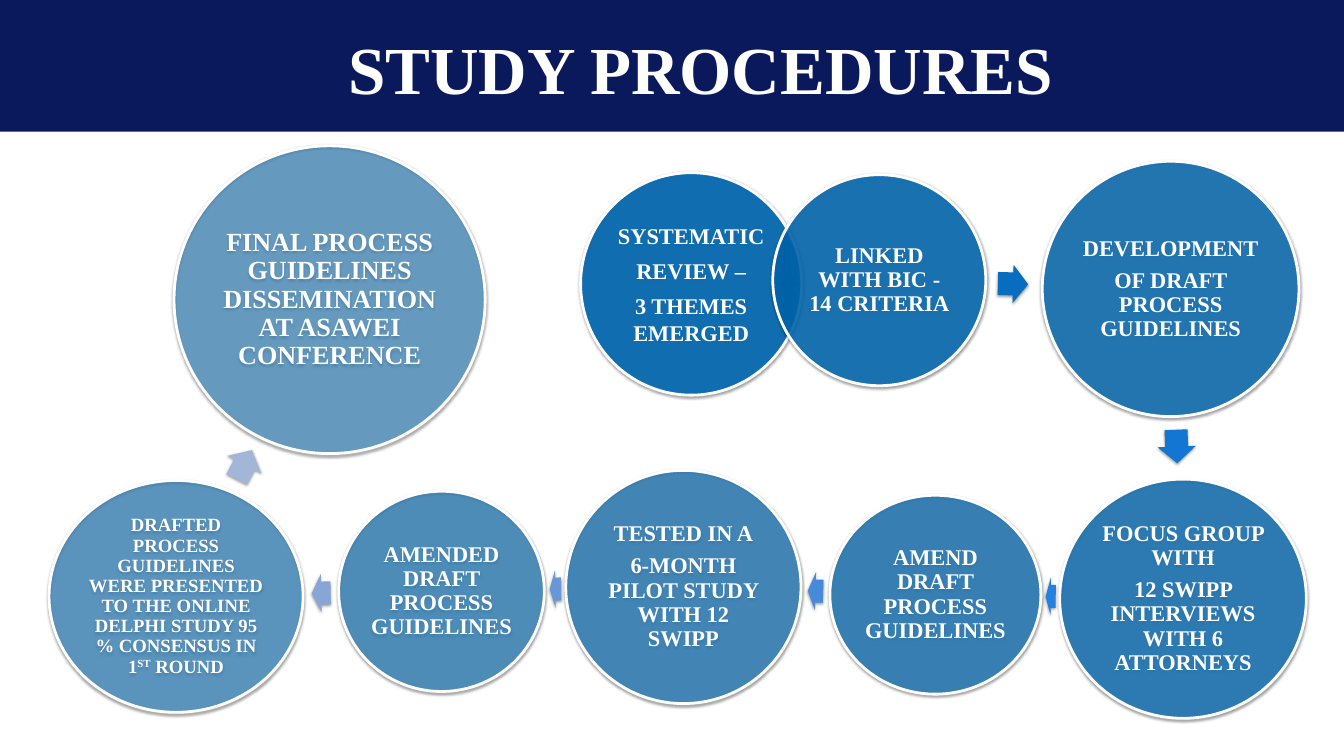
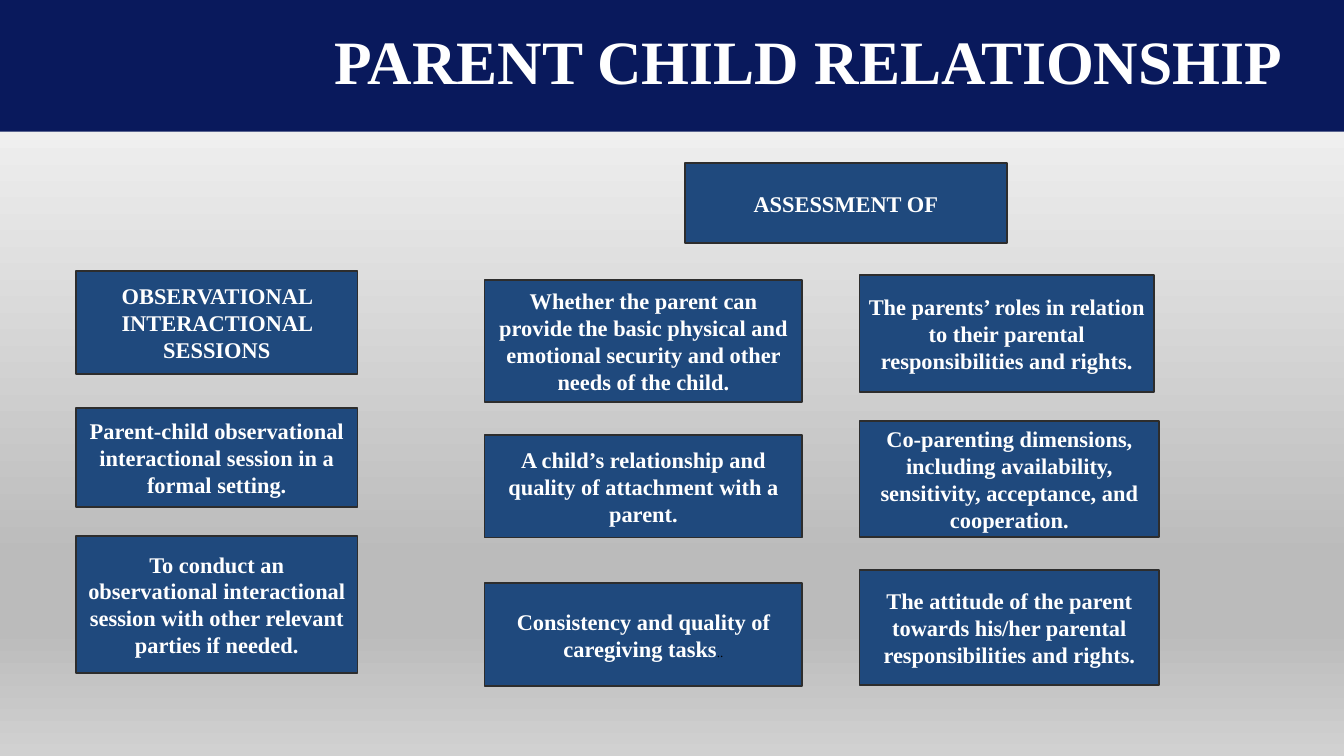
from copy import deepcopy
from itertools import zip_longest

from pptx import Presentation, oxml
from pptx.dml.color import RGBColor
from pptx.enum import shapes, text
from pptx.oxml import ns
from pptx.util import Inches, Pt

FONT = "Times New Roman"
NAVY = RGBColor(0x09, 0x19, 0x5C)
BLUE = RGBColor(0x00, 0x67, 0xB1)
STEEL = RGBColor(0x1F, 0x49, 0x7D)
EDGE = RGBColor(0x2D, 0x2D, 0x2D)
WHITE = RGBColor(0xFF, 0xFF, 0xFF)
BLACK = RGBColor(0x00, 0x00, 0x00)
GREYS = [(0, "FFFFFF"), (0.74, "BBBBBB"), (0.83, "BBBBBB"), (1, "D1D1D1")]
KIND = shapes.MSO_SHAPE

STEPS = [
    ((8.64, 2.57, 3.29, 3.31), 24, ["SYSTEMATIC", "REVIEW –", "3 THEMES EMERGED"]),
    ((11.5, 2.6, 3.17, 3.14), 24, ["LINKED WITH BIC - 14 CRITERIA"]),
    ((15.51, 2.4, 3.82, 3.8), 24, ["DEVELOPMENT", "OF DRAFT PROCESS GUIDELINES"]),
    ((15.77, 7.13, 3.67, 3.56), 24,
     ["FOCUS GROUP WITH", "12 SWIPP INTERVIEWS WITH 6 ATTORNEYS"]),
    ((12.35, 7.37, 3.14, 2.96), 24, ["AMEND DRAFT PROCESS GUIDELINES"]),
    ((8.42, 7, 3.5, 3.47), 24, ["TESTED IN A", "6-MONTH PILOT STUDY WITH 12 SWIPP"]),
    ((5.04, 7.31, 3.06, 2.98), 24, ["AMENDED DRAFT PROCESS GUIDELINES"]),
    ((0.73, 7.15, 3.78, 3.45), 20,
     [["DRAFTED PROCESS GUIDELINES WERE PRESENTED TO THE ONLINE DELPHI STUDY "
       "95 % CONSENSUS IN 1", ("ST", {"base": 30}), " ROUND"]]),
    ((2.59, 2.17, 4.63, 4.58), 28,
     ["FINAL PROCESS GUIDELINES DISSEMINATION AT ASAWEI CONFERENCE"]),
]

LINKS = [
    ((11.58, 3.4, 0.28, 1.59), 178.9, "0062A9"),
    ((14.85, 3.94, 0.45, 0.57), 1.6, "086DBF"),
    ((17.26, 6.36, 0.5, 0.57), 87.7, "1376D2"),
    ((15.56, 8.59, 0.15, 0.57), 180.7, "247FDF"),
    ((12.02, 8.51, 0.23, 0.57), 181.8, "478ADA"),
    ((8.18, 8.48, 0.17, 0.57), 179.1, "6897D7"),
    ((4.64, 8.54, 0.28, 0.57), 178.9, "86A6D6"),
    ((3.39, 6.63, 0.49, 0.57), 297.4, "A2B6D8"),
]

BOXES = [
    ((1.13, 4.03, 4.19, 1.53), "OBSERVATIONAL INTERACTIONAL SESSIONS"),
    ((1.13, 6.07, 4.19, 1.48),
     "Parent-child observational interactional session in a formal setting."),
    ((1.13, 7.98, 4.19, 2.03),
     "To conduct an observational interactional session with other relevant "
     "parties if needed."),
    ((10.19, 2.43, 4.79, 1.19), "ASSESSMENT OF"),
    ((7.21, 4.17, 4.73, 1.81),
     "Whether the parent can provide the basic physical and emotional security "
     "and other needs of the child."),
    ((7.21, 6.47, 4.73, 1.53),
     "A child’s relationship and quality of attachment with a parent."),
    ((7.21, 8.68, 4.73, 1.53),
     ["Consistency and quality of caregiving tasks",
      ("..", {"size": 14, "color": BLACK, "bold": False})]),
    ((12.79, 4.09, 4.38, 1.74),
     "The parents’ roles in relation to their parental responsibilities and rights."),
    ((12.79, 6.27, 4.46, 1.72),
     "Co-parenting dimensions, including availability, sensitivity, acceptance, "
     "and cooperation."),
    ((12.79, 8.48, 4.46, 1.72),
     "The attitude of the parent towards his/her parental responsibilities and rights."),
]


def style(run, size, color=WHITE, bold=True, base=0):
    font = run.font
    font.name, font.size, font.bold = FONT, Pt(size), bold
    font.color.rgb = color
    if base:
        font._element.set("baseline", str(base * 1000))


def write(shape, paras, size=24, align=text.PP_ALIGN.CENTER, inset=(0.1, 0.05),
          after=0, lead=None):
    frame = shape.text_frame
    frame.word_wrap = True
    frame.auto_size = text.MSO_AUTO_SIZE.NONE
    frame.vertical_anchor = text.MSO_ANCHOR.MIDDLE
    frame.margin_left = frame.margin_right = Inches(inset[0])
    frame.margin_top = frame.margin_bottom = Inches(inset[1])
    for i, runs in enumerate(paras):
        para = frame.add_paragraph() if i else frame.paragraphs[0]
        para.alignment = align
        para.space_after = Pt(after)
        para.line_spacing = lead
        for part in [runs] if isinstance(runs, str) else runs:
            words, look = (part, {}) if isinstance(part, str) else part
            run = para.add_run()
            run.text = words
            style(run, **{"size": size, **look})


def draw(slide, kind, at, fill, line=None, width=0, alpha=None, shade=False):
    shape = slide.shapes.add_shape(kind, *map(Inches, at))
    shape.fill.solid()
    shape.fill.fore_color.rgb = fill
    if line is None:
        shape.line.fill.background()
    else:
        shape.line.color.rgb = line
        shape.line.width = Pt(width)
    shape.shadow.inherit = False
    if alpha:
        color = shape.element.spPr.find(ns.qn("a:solidFill"))[0]
        color.append(oxml.parse_xml(
            f'<a:alpha {ns.nsdecls("a")} val="{alpha * 1000}"/>'))
    if shade:
        shape.element.spPr.find(ns.qn("a:effectLst")).append(oxml.parse_xml(
            f'<a:outerShdw {ns.nsdecls("a")} blurRad="{Pt(3.1)}" dist="{Pt(1.6)}" '
            'dir="5400000" rotWithShape="0"><a:srgbClr val="000000">'
            '<a:alpha val="38000"/></a:srgbClr></a:outerShdw>'))
    return shape


def start(deck, title, at, size):
    slide = deck.slides.add_slide(deck.slide_layouts[5])
    head = slide.shapes.title
    head.left, head.top, head.width, head.height = map(Inches, at)
    write(head, [title], size=size, align=text.PP_ALIGN.LEFT)
    return slide


def band(slide):
    bar = draw(slide, KIND.RECTANGLE, (0, 0, 20, 1.96), NAVY)
    slide.slide_layout.shapes.element.insert(2, bar.element)


def shade(slide):
    fill = slide.background.fill
    fill.gradient()
    fill.gradient_angle = 270
    stops = slide.element.find(".//" + ns.qn("a:gsLst"))
    for _ in range(len(GREYS) - len(stops)):
        stops.append(deepcopy(stops[0]))
    for stop, (place, color) in zip(fill.gradient_stops, GREYS):
        stop.position = place
        stop.color.rgb = RGBColor.from_string(color)


def circle(slide, at, size, paras, alpha, lead):
    disc = draw(slide, KIND.OVAL, at, BLUE, WHITE, 3, alpha, True)
    write(disc, paras, size=size, inset=(0.03, 0.03), after=size * 0.35, lead=lead)


def link(slide, kind, at, turn, color):
    mark = draw(slide, kind, at, RGBColor.from_string(color), shade=True)
    mark.rotation = turn
    if kind == KIND.RIGHT_ARROW:
        mark.adjustments[0], mark.adjustments[1] = 0.6, 0.5


def study(deck):
    slide = start(deck, "STUDY PROCEDURES", (5.08, 0.38, 14.58, 1.25), 72)
    band(slide)
    for i, (step, join) in enumerate(zip_longest(STEPS, LINKS)):
        circle(slide, *step, alpha=90 - 5 * i, lead=0.9 if i else None)
        if join:
            link(slide, KIND.RIGHT_ARROW if i else KIND.MATH_PLUS, *join)


def parent(deck):
    slide = start(deck, "PARENT CHILD RELATIONSHIP", (4.88, 0.3, 15.12, 1.18), 66)
    shade(slide)
    for at, words in BOXES:
        write(draw(slide, KIND.RECTANGLE, at, STEEL, EDGE, 2), [words])


def main():
    deck = Presentation()
    deck.slide_width, deck.slide_height = Inches(20), Inches(11.25)
    study(deck)
    parent(deck)
    deck.save("out.pptx")


if __name__ == "__main__":
    main()
